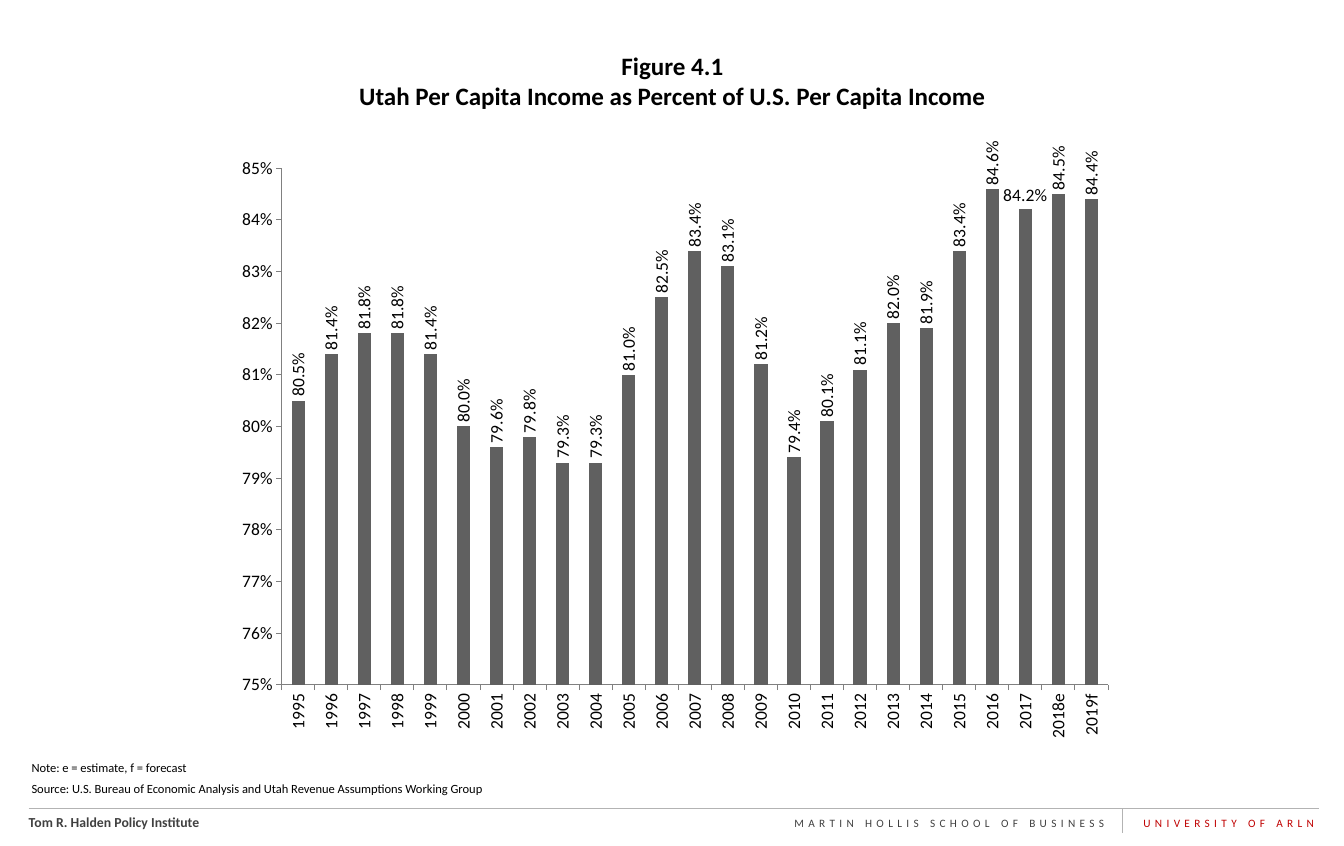
import pptx
import pptx.chart.data
import pptx.dml.color
import pptx.enum.chart
import pptx.enum.shapes
import pptx.enum.text
import pptx.oxml
import pptx.oxml.ns
import pptx.util
from pptx.util import Pt

COLORS = {
    "text": "000000",
    "footer": "404040",
    "accent": "C00000",
    "rule": "B3B3B3",
    "axis": "808080",
    "bar": "606060",
}
FONT = "Calibri"
ALIGN = pptx.enum.text.PP_ALIGN

YEARS = [str(year) for year in range(1995, 2018)] + ["2018e", "2019f"]
INCOME_SHARES = [
    0.805, 0.814, 0.818, 0.818, 0.814, 0.800, 0.796, 0.798, 0.793,
    0.793, 0.810, 0.825, 0.834, 0.831, 0.812, 0.794, 0.801, 0.811,
    0.820, 0.819, 0.834, 0.846, 0.842, 0.845, 0.844,
]


def rgb(name):
    return pptx.dml.color.RGBColor.from_string(COLORS[name])


def style_font(font, size, color="text", bold=False):
    font.name = FONT
    font.size = Pt(size)
    font.bold = bold
    font.color.rgb = rgb(color)


def add_text(page, box, lines, size, color="text", bold=False,
             align=ALIGN.LEFT, insets=(0, 0), gap=0, tracking=0):
    """Write lines in a box; gap separates them, tracking spaces letters."""
    frame = page.shapes.add_textbox(*map(Pt, box)).text_frame
    frame.word_wrap = True
    frame.margin_left = frame.margin_right = Pt(insets[0])
    frame.margin_top = frame.margin_bottom = Pt(insets[1])
    for index, line in enumerate(lines):
        para = frame.add_paragraph() if index else frame.paragraphs[0]
        para.alignment = align
        para.space_before = Pt(gap if index else 0)
        style_font(para.font, size, color, bold)
        span = para.add_run()
        span.text = line
        if tracking:
            span.font._element.set("spc", str(round(tracking * 100)))


def add_rule(page, x1, y1, x2, y2):
    rule = page.shapes.add_connector(
        pptx.enum.shapes.MSO_CONNECTOR.STRAIGHT, Pt(x1), Pt(y1), Pt(x2), Pt(y2))
    rule.line.color.rgb = rgb("rule")
    rule.line.width = Pt(0.75)
    rule._element.spPr.append(pptx.oxml.parse_xml(
        f'<a:effectLst {pptx.oxml.ns.nsdecls("a")}/>'))


def set_rotation(element, degrees):
    body = next(element.iter(pptx.oxml.ns.qn("a:bodyPr")))
    body.set("rot", str(degrees * 60000))
    body.set("vert", "horz")


def set_plot_area(chart, x, y, width, height):
    """Fix the inner plot area, in fractions of the chart."""
    plot_area = chart._chartSpace.chart.plotArea
    for old in plot_area.findall(pptx.oxml.ns.qn("c:layout")):
        plot_area.remove(old)
    plot_area.insert(0, pptx.oxml.parse_xml(
        f'<c:layout {pptx.oxml.ns.nsdecls("c")}><c:manualLayout>'
        '<c:layoutTarget val="inner"/><c:xMode val="edge"/><c:yMode val="edge"/>'
        f'<c:x val="{x}"/><c:y val="{y}"/><c:w val="{width}"/><c:h val="{height}"/>'
        '</c:manualLayout></c:layout>'))


def style_axis(axis):
    axis.has_major_gridlines = False
    axis.major_tick_mark = pptx.enum.chart.XL_TICK_MARK.OUTSIDE
    axis.minor_tick_mark = pptx.enum.chart.XL_TICK_MARK.NONE
    axis.format.line.color.rgb = rgb("axis")
    axis.format.line.width = Pt(0.75)
    style_font(axis.tick_labels.font, 14)


def add_income_chart(page, box):
    data = pptx.chart.data.CategoryChartData(number_format="0.0%")
    data.categories = YEARS
    data.add_series("Series 1", INCOME_SHARES)
    chart = page.shapes.add_chart(
        pptx.enum.chart.XL_CHART_TYPE.COLUMN_CLUSTERED, *map(Pt, box), data).chart
    chart.has_title = False
    chart.has_legend = False
    style_font(chart.font, 10)
    set_plot_area(chart, 0.066, 0.082, 0.918, 0.802)

    # Axes
    years, shares = chart.category_axis, chart.value_axis
    style_axis(years)
    style_axis(shares)
    set_rotation(years._element, -90)
    shares.minimum_scale, shares.maximum_scale = 0.75, 0.85
    shares.major_unit = 0.01
    shares.tick_labels.number_format = "0%"
    shares.tick_labels.number_format_is_linked = False

    # Bars
    plot = chart.plots[0]
    plot.gap_width = 150
    plot.vary_by_categories = False
    bars = plot.series[0]
    bars.invert_if_negative = False
    bars.format.fill.solid()
    bars.format.fill.fore_color.rgb = rgb("bar")

    # Upright value labels, with 2017 set level
    outside = pptx.enum.chart.XL_LABEL_POSITION.OUTSIDE_END
    labels = bars.data_labels
    labels.show_value = True
    labels.position = outside
    labels.number_format = "0.0%"
    labels.number_format_is_linked = False
    style_font(labels.font, 14)
    set_rotation(labels._element, -90)
    level = bars.points[YEARS.index("2017")].data_label
    frame = level.text_frame
    frame.text = "84.2%"
    style_font(frame.paragraphs[0].runs[0].font, 14)
    set_rotation(frame._txBody, 0)
    level.position = outside


def add_footer(page, box):
    left, top, width, height = box
    right, divider = left + width, left + 875
    add_rule(page, left, top, right, top)
    add_rule(page, divider, top, divider, top + height)
    add_text(page, (left, top + 4.5, 300, 14),
             ["Tom R. Halden Policy Institute"], 11, "footer", bold=True)
    add_text(page, (divider - 365, top + 6.5, 350, 12),
             ["MARTIN HOLLIS SCHOOL OF BUSINESS"], 9, "footer",
             align=ALIGN.RIGHT, tracking=3.5)
    add_text(page, (divider + 16.5, top + 6.5, 158, 12),
             ["UNIVERSITY OF ARLN"], 9, "accent", tracking=3.5)


def build_slide(deck):
    page = deck.slides.add_slide(deck.slide_layouts[6])
    add_footer(page, (23, 646.5, 1032, 19.5))
    # Title
    add_text(page, (177.8, 36.7, 720, 55.4),
             ["Figure 4.1",
              "Utah Per Capita Income as Percent of U.S. Per Capita Income"],
             20, bold=True, align=ALIGN.CENTER, insets=(7.2, 3.6))
    # Notes under the chart
    add_text(page, (21.6, 605.5, 497.5, 33.8),
             ["Note: e = estimate, f = forecast",
              "Source: U.S. Bureau of Economic Analysis and "
              "Utah Revenue Assumptions Working Group"],
             10, insets=(3.6, 2.16), gap=5.4)
    add_income_chart(page, (177.8, 92.2, 720, 515.5))


def main():
    deck = pptx.Presentation()
    deck.slide_width, deck.slide_height = Pt(1074.96), Pt(676.8)
    build_slide(deck)
    deck.save("out.pptx")


if __name__ == "__main__":
    main()
